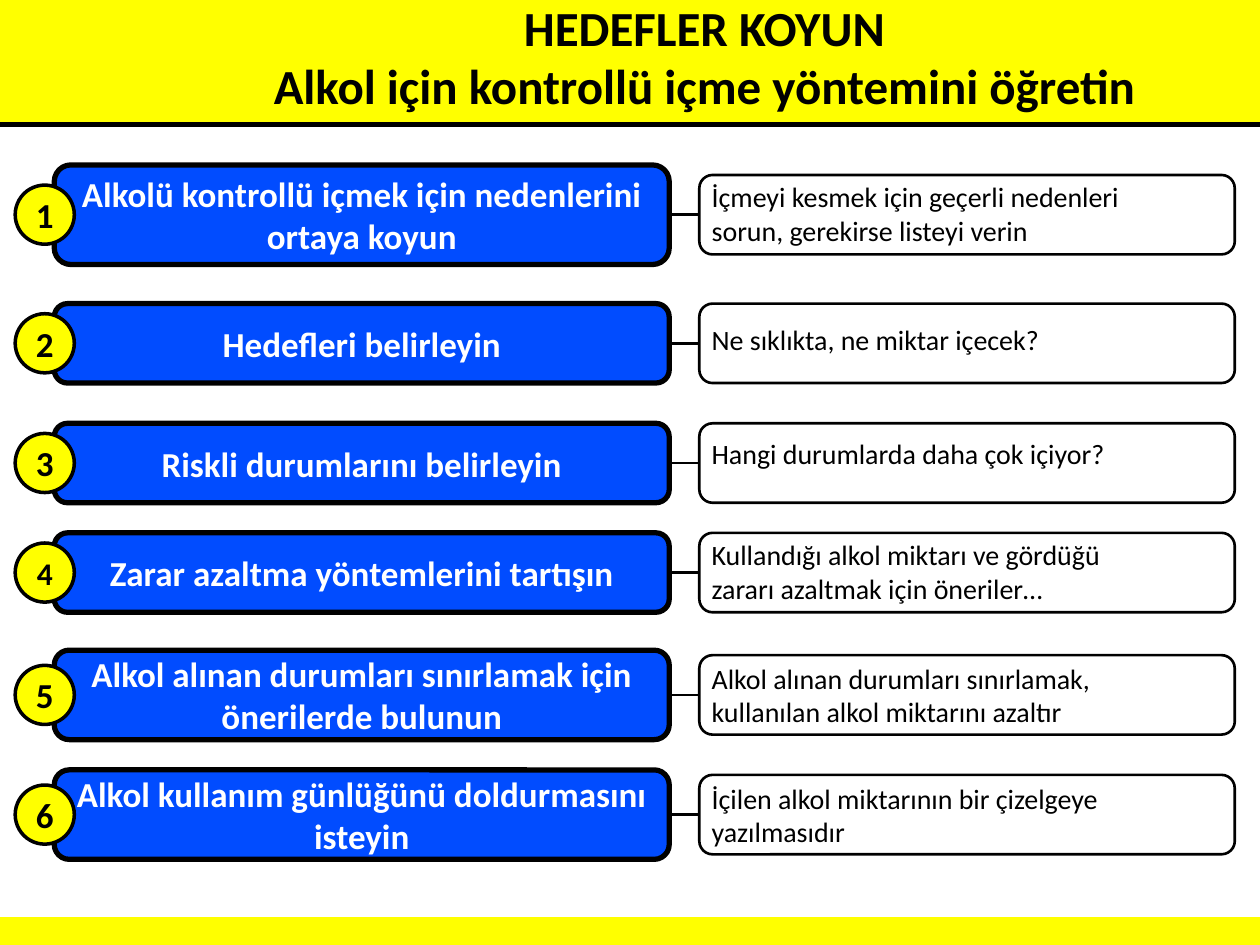
from dataclasses import dataclass

from lxml import etree
from pptx import Presentation
from pptx.dml.color import RGBColor
from pptx.enum.shapes import MSO_CONNECTOR, MSO_SHAPE as SHAPE
from pptx.enum.text import MSO_ANCHOR as ANCHOR, MSO_AUTO_SIZE as FIT, PP_ALIGN as ALIGN
from pptx.oxml.ns import qn
from pptx.util import Pt


@dataclass(frozen=True)
class Theme:
    font: str = "Calibri"
    yellow: RGBColor = RGBColor(0xFF, 0xFF, 0x00)
    blue: RGBColor = RGBColor(0x01, 0x4C, 0xFF)
    black: RGBColor = RGBColor(0, 0, 0)
    white: RGBColor = RGBColor(0xFF, 0xFF, 0xFF)
    title: int = 28
    step: int = 20
    small_number: int = 18
    note: int = 16


THEME = Theme()
WIDTH, HEIGHT = 720, 540
BADGE = 33.8
NOTE_HEIGHT = 45.4

TITLE = "HEDEFLER KOYUN\vAlkol için kontrollü içme yöntemini öğretin"

# Row centre, step height, step text, note text, note text top above the centre
ROWS = [
    (122.7, 56.9, "Alkolü kontrollü içmek için nedenlerini ortaya koyun",
     "İçmeyi kesmek için geçerli nedenleri sorun, gerekirse listeyi verin", 23.4),
    (196.2, 45.4, "Hedefleri belirleyin", "Ne sıklıkta, ne miktar içecek?", 15.5),
    (264.6, 45.4, "Riskli durumlarını belirleyin", "Hangi durumlarda daha çok içiyor?", 18.4),
    (327.2, 45.4, "Zarar azaltma yöntemlerini tartışın",
     "Kullandığı alkol miktarı ve gördüğü zararı azaltmak için öneriler…", 23.4),
    (397.1, 51.1, "Alkol alınan durumları sınırlamak için önerilerde bulunun",
     "Alkol alınan durumları sınırlamak, kullanılan alkol miktarını azaltır", 22.7),
    (465.5, 51.1, "Alkol kullanım günlüğünü doldurmasını isteyin",
     "İçilen alkol miktarının bir çizelgeye yazılmasıdır", 22.7),
]


def write(shape, text, size, color=THEME.black, bold=False, align=ALIGN.CENTER,
          anchor=ANCHOR.MIDDLE, fit=FIT.NONE, inset=None):
    frame = shape.text_frame
    frame.word_wrap = True
    frame.auto_size = fit
    frame.vertical_anchor = anchor
    if inset is not None:
        frame.margin_left = frame.margin_right = Pt(inset)
        frame.margin_top = frame.margin_bottom = Pt(inset)
    para = frame.paragraphs[0]
    para.text = text
    para.alignment = align
    for span in para.runs:
        span.font.name = THEME.font
        span.font.size = Pt(size)
        span.font.bold = bold
        span.font.color.rgb = color
    # A line break keeps the size of the text around it
    for line_break in para._p.findall(qn("a:br")):
        etree.SubElement(line_break, qn("a:rPr"), sz=str(size * 100))


def add_box(page, kind, left, top, width, height, line, weight, fill=None):
    box = page.shapes.add_shape(kind, Pt(left), Pt(top), Pt(width), Pt(height))
    box.shadow.inherit = False
    if fill is None:
        box.fill.background()
    else:
        box.fill.solid()
        box.fill.fore_color.rgb = fill
    box.line.color.rgb = line
    box.line.width = Pt(weight)
    return box


def add_line(page, left, right, y, weight):
    line = page.shapes.add_connector(
        MSO_CONNECTOR.STRAIGHT, Pt(left), Pt(y), Pt(right), Pt(y))
    line.line.color.rgb = THEME.black
    line.line.width = Pt(weight)
    etree.SubElement(line._element.spPr, qn("a:effectLst"))


def add_band(page, top, height):
    add_box(page, SHAPE.RECTANGLE, 0, top, WIDTH, height, THEME.yellow, 2, THEME.yellow)


def add_header(page, height):
    add_band(page, 0, height)
    add_line(page, 0, WIDTH, height, 3)
    title = page.shapes.title
    title.left, title.top = Pt(42.5), Pt(-13)
    title.width, title.height = Pt(WIDTH), Pt(90)
    write(title, TITLE, THEME.title, bold=True)
    # The title stands in front of its band
    page.shapes._spTree.append(title._element)


def add_step(page, number, left, middle, width, height, text):
    box = add_box(page, SHAPE.ROUNDED_RECTANGLE, left, middle - height / 2,
                  width, height, THEME.black, 3, THEME.blue)
    write(box, text, THEME.step, THEME.white, bold=True)
    # The number badge overlaps the left edge
    badge = add_box(page, SHAPE.OVAL, left - 22.3, middle - BADGE / 2,
                    BADGE, BADGE, THEME.black, 2, THEME.yellow)
    size = THEME.small_number if number == 4 else THEME.step
    write(badge, str(number), size, bold=True, inset=0)


def add_note(page, left, middle, width, text, rise):
    height = 46 if rise > 20 else 26.6
    label = page.shapes.add_textbox(Pt(left), Pt(middle - rise), Pt(255), Pt(height))
    write(label, text, THEME.note, align=ALIGN.LEFT, anchor=ANCHOR.TOP,
          fit=FIT.SHAPE_TO_FIT_TEXT)
    add_box(page, SHAPE.ROUNDED_RECTANGLE, left, middle - NOTE_HEIGHT / 2,
            width, NOTE_HEIGHT, THEME.black, 1.5)


def add_rows(page, left, step_width, note_left, note_width):
    for number, (middle, height, step, note, rise) in enumerate(ROWS, 1):
        add_step(page, number, left, middle, step_width, height, step)
        add_note(page, note_left, middle, note_width, note, rise)
        add_line(page, left + step_width, note_left, middle, 1.5)


def main():
    deck = Presentation()
    deck.slide_width, deck.slide_height = Pt(WIDTH), Pt(HEIGHT)
    page = deck.slides.add_slide(deck.slide_layouts[5])
    add_header(page, 71.3)
    add_band(page, 525, 15)
    add_rows(page, 31, 351.4, 399.6, 306)
    deck.save("out.pptx")


if __name__ == "__main__":
    main()
